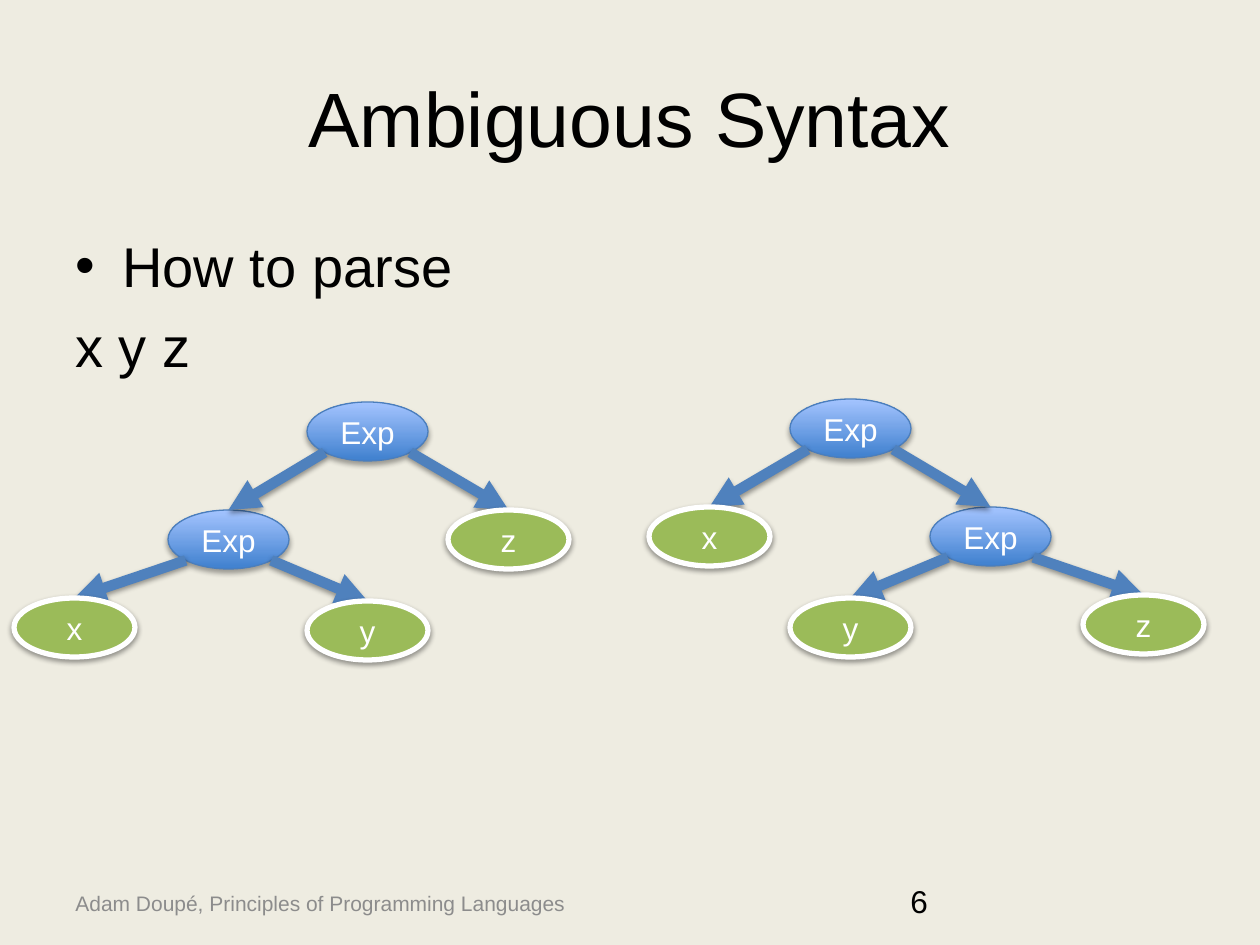
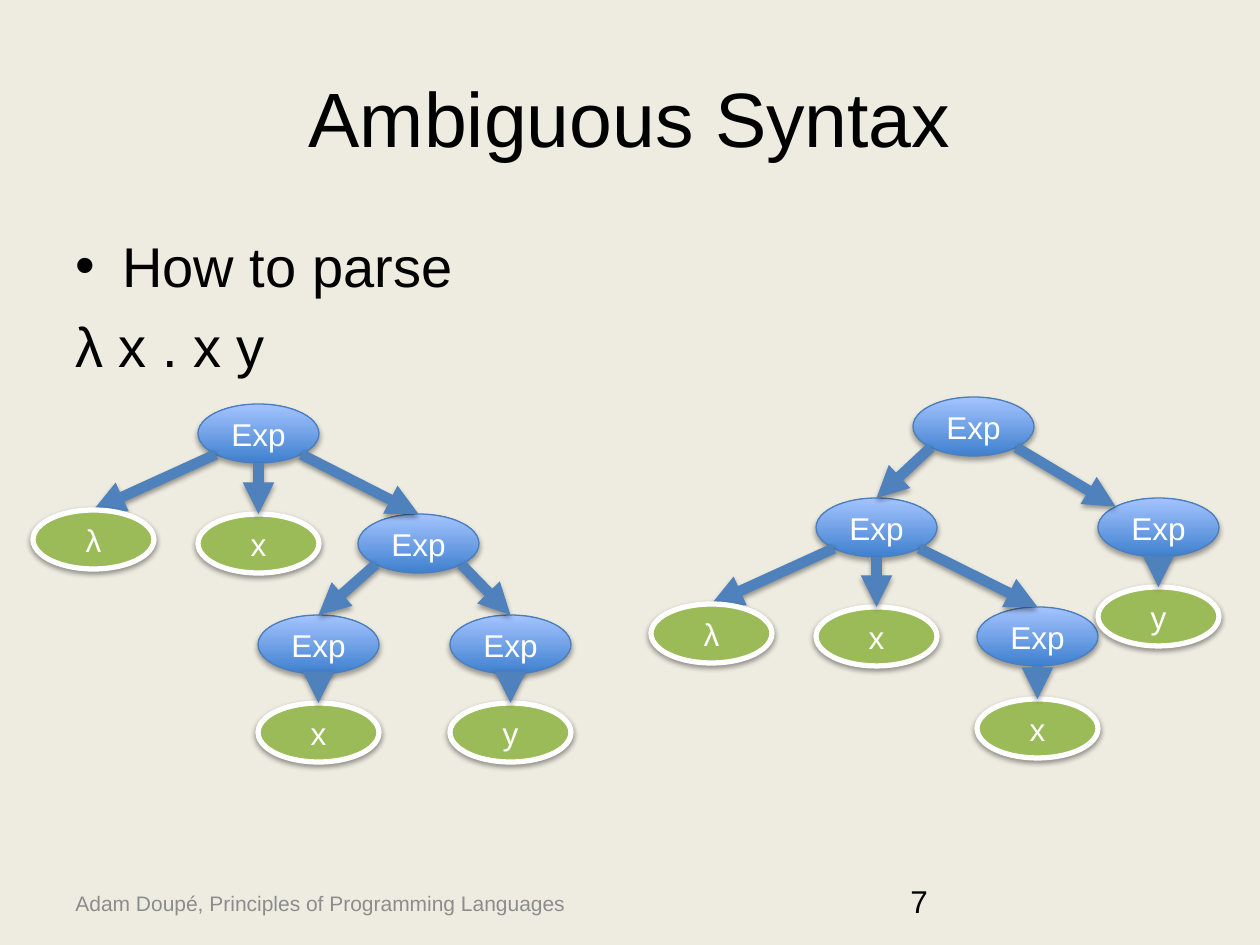
from math import sqrt

from lxml.etree import SubElement
from pptx import Presentation
from pptx.dml.color import RGBColor
from pptx.enum.shapes import MSO_CONNECTOR as CONNECTOR, MSO_SHAPE as SHAPE
from pptx.enum.text import MSO_ANCHOR as ANCHOR, PP_ALIGN as ALIGN
from pptx.oxml import parse_xml
from pptx.oxml.ns import nsdecls, qn
from pptx.util import Pt

PX = 914400 / 126
rgb = RGBColor.from_string

FONT = "Arial"
PAPER, BLACK, WHITE, GREY = "EEECE1", "000000", "FFFFFF", "8C8C8C"
EXP_DARK, EXP_LIGHT, EXP_EDGE = "3F80CE", "A4C4FF", "4B7EBC"
LEAF, ARROW = "9BBB59", "4F81BD"

TITLE = "Ambiguous Syntax"
FOOTER = "Adam Doupé, Principles of Programming Languages"
NODE_W, NODE_H = 121, 59

# Each node: label, left, top, index of its parent, and "corner" where the
# arrow enters at the upper left instead of the top
PAGES = [
    (6, "x y z", [
        [("Exp", 307, 402, None), ("Exp", 168, 510, 0), ("z", 448, 510, 0),
         ("x", 14, 598, 1), ("y", 307, 601, 1)],
        [("Exp", 790, 399, None), ("x", 649, 507, 0), ("Exp", 930, 507, 0),
         ("y", 790, 598, 2), ("z", 1083, 595, 2)],
    ]),
    (7, "λ x . x y", [
        [("Exp", 198, 404, None), ("λ", 33, 510, 0), ("x", 198, 514, 0),
         ("Exp", 358, 514, 0), ("Exp", 258, 615, 3), ("Exp", 450, 615, 3),
         ("x", 258, 703, 4), ("y", 450, 703, 5)],
        [("Exp", 913, 397, None), ("Exp", 816, 498, 0),
         ("Exp", 1098, 498, 0, "corner"), ("λ", 651, 604, 1),
         ("x", 816, 607, 1), ("Exp", 977, 607, 1), ("x", 977, 699, 5),
         ("y", 1098, 587, 2)],
    ]),
]


def write(shape, text, size=18, color=BLACK, align=ALIGN.LEFT,
          anchor=ANCHOR.TOP, gap=0):
    frame = shape.text_frame
    frame.word_wrap = True
    frame.vertical_anchor = anchor
    for number, line in enumerate(text.split("\n")):
        para = frame.add_paragraph() if number else frame.paragraphs[0]
        para.alignment = align
        if number:
            para.space_before = Pt(gap)
        span = para.add_run()
        span.text = line
        span.font.name, span.font.size = FONT, Pt(size)
        span.font.color.rgb = rgb(color)


def cast_shadow(shape, opacity, distance):
    shape.element.spPr.append(parse_xml(
        f'<a:effectLst {nsdecls("a")}><a:outerShdw blurRad="{Pt(3.1)}" '
        f'dist="{Pt(distance)}" dir="5400000" rotWithShape="0">'
        f'<a:srgbClr val="{BLACK}"><a:alpha val="{opacity * 1000}"/>'
        '</a:srgbClr></a:outerShdw></a:effectLst>'))


deck = Presentation()
deck.slide_width, deck.slide_height = int(1260 * PX), int(945 * PX)
backdrop = deck.slide_master.background.fill
backdrop.solid()
backdrop.fore_color.rgb = rgb(PAPER)
title_only = deck.slide_layouts[5]

for number, expression, trees in PAGES:
    page = deck.slides.add_slide(title_only)

    # Title, question, footer and page number
    title = page.shapes.title
    title.left, title.top, title.width, title.height = (
        int(side * PX) for side in (63, 38, 1134, 157))
    write(title, TITLE, size=44, align=ALIGN.CENTER, anchor=ANCHOR.MIDDLE)

    footer, question, counter = (
        page.shapes.add_textbox(*(int(side * PX) for side in place))
        for place in ((63, 878, 537, 50), (63, 220, 1134, 624),
                      (898, 876, 294, 50)))
    write(footer, FOOTER, size=12, color=GREY, anchor=ANCHOR.MIDDLE)
    write(counter, str(number))
    write(question, f"How to parse\n{expression}", size=32, gap=7.5)
    question.text_frame.margin_top = int(11 * PX)
    bullet = question.text_frame.paragraphs[0]._p.get_or_add_pPr()
    bullet.set("marL", str(int(47 * PX)))
    bullet.set("indent", str(int(-47 * PX)))
    SubElement(bullet, qn("a:buFont"), typeface=FONT)
    SubElement(bullet, qn("a:buChar"), char="•")

    for nodes in trees:
        # Arrows leave a parent at the bottom or at a lower corner
        slanted, upright = [], []
        for label, left, top, parent, *corner in nodes:
            if parent is None:
                continue
            _, parent_left, parent_top, *_ = nodes[parent]
            side = (left > parent_left) - (left < parent_left)
            reach = 1 / sqrt(2) if side else 1
            start = (parent_left + NODE_W / 2 * (1 + side * reach),
                     parent_top + NODE_H / 2 * (1 + reach))
            inset = 1 - 1 / sqrt(2) if corner else 1
            end = (left + NODE_W / 2 * inset,
                   top + (NODE_H / 2 * inset if corner else 0))
            (slanted if side else upright).append((start, end))

        # Back to front: expressions, slanted arrows, leaves, upright arrows
        expressions = [node for node in nodes if node[0] == "Exp"]
        leaves = [node for node in nodes if node[0] != "Exp"]
        for layer, arrows in ((expressions, slanted), (leaves, upright)):
            for label, left, top, *_ in layer:
                oval = page.shapes.add_shape(SHAPE.OVAL, *(
                    int(side * PX) for side in (left, top, NODE_W, NODE_H)))
                is_exp = label == "Exp"
                if is_exp:
                    oval.fill.gradient()
                    oval.fill.gradient_angle = 90
                    for stop, shade in zip(oval.fill.gradient_stops,
                                           (EXP_DARK, EXP_LIGHT)):
                        stop.color.rgb = rgb(shade)
                else:
                    oval.fill.solid()
                    oval.fill.fore_color.rgb = rgb(LEAF)
                oval.line.color.rgb = rgb(EXP_EDGE if is_exp else WHITE)
                oval.line.width = Pt(0.75 if is_exp else 3)
                cast_shadow(oval, *((35, 1.8) if is_exp else (38, 1.6)))
                write(oval, label, color=WHITE, align=ALIGN.CENTER,
                      anchor=ANCHOR.MIDDLE)

            for start, end in arrows:
                arrow = page.shapes.add_connector(CONNECTOR.STRAIGHT, *(
                    int(side * PX) for side in (*start, *end)))
                arrow.line.color.rgb = rgb(ARROW)
                arrow.line.width = Pt(6)
                SubElement(arrow.element.spPr.find(qn("a:ln")),
                           qn("a:tailEnd"), type="triangle")
                cast_shadow(arrow, 38, 1.6)

deck.save("out.pptx")
